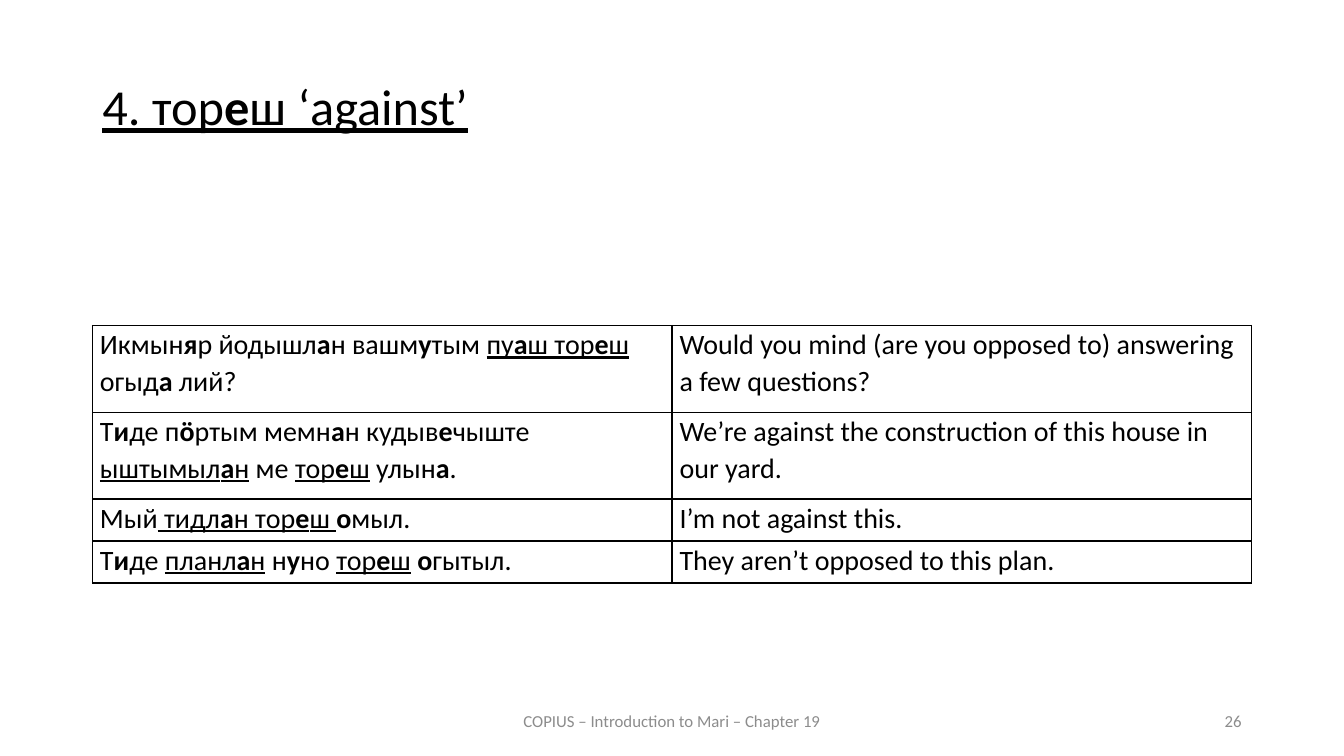
"""Build the Mari language slide on the postposition тореш."""
from dataclasses import dataclass
from itertools import groupby

from lxml import etree
from pptx import Presentation, util as u
from pptx.dml.color import RGBColor
from pptx.enum import text
from pptx.oxml.ns import qn

BLACK, GREY, FONT = "000000", "8C8C8C", "Calibri"
LEFT, WIDTH = 66, 828
TABLE_TOP = 232.5
ROW_HEIGHTS = (62, 62, 30, 30)


@dataclass(frozen=True)
class Example:
    """A Mari sentence (*bold*, _underlined_) and its translation."""
    mari: str
    english: str


@dataclass(frozen=True)
class FooterItem:
    """A line of text at the foot of the slide."""
    words: str
    left: float
    width: float
    align: text.PP_ALIGN


TITLE = "_4. тор*е*ш ‘against’_"
EXAMPLES = (
    Example("Икмын*я*р йодышл*а*н вашм*у*тым _пу*а*ш тор*е*ш_ огыд*а* лий?",
            "Would you mind (are you opposed to) answering a few questions?"),
    Example("Т*и*де п*ӧ*ртым мемн*а*н кудыв*е*чыште _ыштымыл*а*н_ ме _тор*е*ш_ улын*а*.",
            "We’re against the construction of this house in our yard."),
    Example("Мый_ тидл*а*н тор*е*ш _*о*мыл.", "I’m not against this."),
    Example("Т*и*де _планл*а*н_ н*у*но _тор*е*ш_ *о*гытыл.",
            "They aren’t opposed to this plan."),
)
FOOTER = (
    FooterItem("COPIUS – Introduction to Mari – Chapter 19", 318, 324, text.PP_ALIGN.CENTER),
    FooterItem("26", 678, 216, text.PP_ALIGN.RIGHT),
)


def colour(code: str) -> RGBColor:
    """Turn a hex string into a colour."""
    return RGBColor.from_string(code)


def styled_letters(marked: str):
    """Yield each letter with its bold and underline state."""
    bold = underline = False
    for letter in marked:
        if letter == "*":
            bold = not bold
        elif letter == "_":
            underline = not underline
        else:
            yield letter, bold, underline


def write(para, marked: str, size: float, code: str = BLACK) -> None:
    """Add marked-up text to a paragraph run by run."""
    for (bold, underline), letters in groupby(styled_letters(marked), lambda item: item[1:]):
        span = para.add_run()
        span.text = "".join(letter for letter, *_ in letters)
        span.font.name = FONT
        span.font.size = u.Pt(size)
        span.font.bold = bold
        span.font.underline = underline
        span.font.color.rgb = colour(code)


def add_title(page) -> None:
    """Place and fill the title placeholder."""
    box = page.shapes.title
    box.left, box.top, box.width, box.height = map(u.Pt, (LEFT, 54.7, WIDTH, 60))
    frame = box.text_frame
    frame.word_wrap = True
    frame.auto_size = text.MSO_AUTO_SIZE.NONE
    frame.vertical_anchor = text.MSO_ANCHOR.TOP
    para = frame.paragraphs[0]
    para.alignment = text.PP_ALIGN.JUSTIFY
    para.line_spacing = 0.9
    para.space_before = u.Pt(12)
    write(para, TITLE, 36)


def add_borders(cell) -> None:
    """Draw a thin black line on every side of a cell."""
    properties = cell._tc.get_or_add_tcPr()
    for index, side in enumerate(("a:lnL", "a:lnR", "a:lnT", "a:lnB")):
        line = etree.Element(qn(side), w=str(u.Pt(1)))
        fill = etree.SubElement(line, qn("a:solidFill"))
        etree.SubElement(fill, qn("a:srgbClr"), val=BLACK)
        properties.insert(index, line)


def fill_cell(cell, marked: str) -> None:
    """Format one table cell and write its sentence."""
    cell.margin_left = cell.margin_right = u.Pt(5.4)
    cell.margin_top = cell.margin_bottom = 0
    cell.fill.background()
    add_borders(cell)
    para = cell.text_frame.paragraphs[0]
    para.line_spacing = 1.07
    write(para, marked, 20)


def add_examples(page) -> None:
    """Add the table of sentences and translations."""
    frame = page.shapes.add_table(len(EXAMPLES), 2, u.Pt(LEFT), u.Pt(TABLE_TOP),
                                  u.Pt(WIDTH), u.Pt(sum(ROW_HEIGHTS)))
    table = frame.table
    table.first_row = table.horz_banding = False
    for row, height, example in zip(table.rows, ROW_HEIGHTS, EXAMPLES):
        row.height = u.Pt(height)
        for cell, marked in zip(row.cells, (example.mari, example.english)):
            fill_cell(cell, marked)


def add_footer(page, item: FooterItem) -> None:
    """Add one grey footer text."""
    box = page.shapes.add_textbox(u.Pt(item.left), u.Pt(500.5), u.Pt(item.width), u.Pt(28.75))
    frame = box.text_frame
    frame.word_wrap = True
    frame.vertical_anchor = text.MSO_ANCHOR.MIDDLE
    para = frame.paragraphs[0]
    para.alignment = item.align
    write(para, item.words, 12, GREY)


def main() -> None:
    """Build and save the deck."""
    deck = Presentation()
    deck.slide_width, deck.slide_height = u.Pt(960), u.Pt(540)
    page = deck.slides.add_slide(deck.slide_layouts.get_by_name("Title Only"))
    add_title(page)
    for item in FOOTER:
        add_footer(page, item)
    add_examples(page)
    deck.save("out.pptx")


if __name__ == "__main__":
    main()
